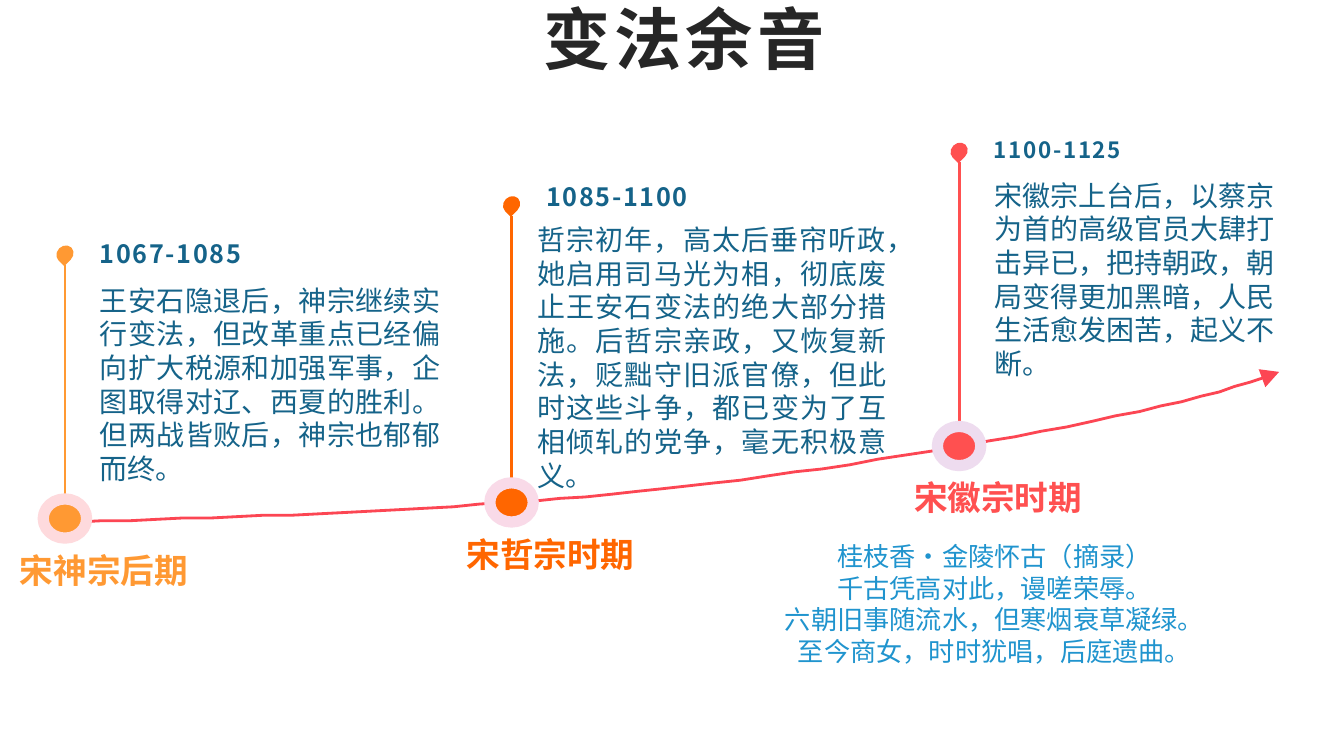
from lxml import etree
from pptx import Presentation
from pptx.dml.color import RGBColor
from pptx.enum.shapes import MSO_CONNECTOR, MSO_SHAPE
from pptx.enum.text import MSO_ANCHOR, MSO_AUTO_SIZE, PP_ALIGN
from pptx.oxml.ns import qn
from pptx.util import Pt

LEFT, MID, JUST = PP_ALIGN.LEFT, PP_ALIGN.CENTER, PP_ALIGN.JUSTIFY
TOP, CENTRE = MSO_ANCHOR.TOP, MSO_ANCHOR.MIDDLE
OVAL, DROP, TIP = MSO_SHAPE.OVAL, MSO_SHAPE.TEAR, MSO_SHAPE.ISOSCELES_TRIANGLE
STRAIGHT, FIXED = MSO_CONNECTOR.STRAIGHT, MSO_AUTO_SIZE.NONE

# Content
TITLE = "变法余音"
POEM = [
    "桂枝香·金陵怀古（摘录）",
    "千古凭高对此，谩嗟荣辱。",
    "六朝旧事随流水，但寒烟衰草凝绿。",
    "至今商女，时时犹唱，后庭遗曲。",
]
# x: stem; pin, dot: centre heights; year: top of date; box: text area
STAGES = [
    dict(name="宋神宗后期", date="1067-1085", size=18, fill="FF9933", ring="FEDADD",
         x=46.4, pin=181.4, dot=370.4, year=166.3, box=(61.9, 197.3, 262, 147),
         text="王安石隐退后，神宗继续实行变法，但改革重点已经偏向扩大税源和加强军事，"
              "企图取得对辽、西夏的胜利。但两战皆败后，神宗也郁郁而终。"),
    dict(name="宋哲宗时期", date="1085-1100", size=18, fill="FF6600", ring="F9DAE8",
         x=365.4, pin=146.2, dot=358.9, year=125.3, box=(374.4, 154.1, 268.6, 190),
         text="哲宗初年，高太后垂帘听政，她启用司马光为相，彻底废止王安石变法的绝大部分措施。"
              "后哲宗亲政，又恢复新法，贬黜守旧派官僚，但此时这些斗争，"
              "都已变为了互相倾轧的党争，毫无积极意义。"),
    dict(name="宋徽宗时期", date="1100-1125", size=16, fill="FF5050", ring="EEDCEF",
         x=685.1, pin=108, dot=318.6, year=92.2, box=(700.6, 122.4, 219.6, 140),
         text="宋徽宗上台后，以蔡京为首的高级官员大肆打击异已，把持朝政，朝局变得更加黑暗，"
              "人民生活愈发困苦，起义不断。"),
]
CURVE = [
    ((33.1, 373.7), (190.1, 368.6), (346.3, 364.3), (491.8, 347)),
    ((491.8, 347), (636.5, 330.5), (833, 295.2), (902.2, 270)),
]
STEPS = 24

THEME = dict(
    head="Noto Sans CJK JP", font="Noto Sans CJK SC",
    ink="262626", body="156389", poem="2094CE", path="FC4653",
    title=48, label=24, text=20, verse=18.7, line=2, ring=8,
)


def rgb(code):
    return RGBColor.from_string(code)


def place(shape, box):
    shape.left, shape.top, shape.width, shape.height = map(Pt, box)


def write(shape, lines, size, color, bold=False, font=THEME["font"], gap=0,
          align=LEFT, space=None, anchor=TOP, inset=(9.4, 5)):
    frame = shape.text_frame
    frame.word_wrap, frame.auto_size = True, FIXED
    frame.vertical_anchor = anchor
    frame.margin_left = frame.margin_right = Pt(inset[0])
    frame.margin_top = frame.margin_bottom = Pt(inset[1])
    for i, line in enumerate(lines):
        para = frame.add_paragraph() if i else frame.paragraphs[0]
        para.alignment = align
        para.space_before = para.space_after = Pt(0)
        if space:
            para.line_spacing = space
        props = para._p.get_or_add_pPr()
        props.set("marL", "0")
        props.set("indent", "0")
        etree.SubElement(props, qn("a:buNone"))
        run = para.add_run()
        run.text = line
        run.font.size, run.font.bold, run.font.name = Pt(size), bold, font
        run.font.color.rgb = rgb(color)
        look = run._r.get_or_add_rPr()
        etree.SubElement(look, qn("a:ea")).set("typeface", font)
        if gap:
            look.set("spc", str(int(gap * 100)))


def label(slide, box, text, size, color, **style):
    write(slide.shapes.add_textbox(*map(Pt, box)), [text], size, color, **style)


def mark(slide, kind, x, y, w, h, fill, ring=None, turn=0):
    """Add a filled shape centred on x, y."""
    shape = slide.shapes.add_shape(kind, Pt(x - w / 2), Pt(y - h / 2), Pt(w), Pt(h))
    shape.shadow.inherit = False
    shape.rotation = turn
    shape.fill.solid()
    shape.fill.fore_color.rgb = rgb(fill)
    if ring:
        shape.line.color.rgb = rgb(ring)
        shape.line.width = Pt(THEME["ring"])
    else:
        shape.line.fill.background()


def bend(a, b, c, d, t):
    """Point on a cubic curve."""
    u = 1 - t
    return tuple(u**3 * p + 3 * u * u * t * q + 3 * u * t * t * r + t**3 * s
                 for p, q, r, s in zip(a, b, c, d))


def draw_path(slide):
    dots = [bend(*part, i / STEPS) for part in CURVE for i in range(STEPS + 1)]
    pen = slide.shapes.build_freeform(*dots[0], scale=Pt(1))
    pen.add_line_segments(dots[1:], close=False)
    path = pen.convert_to_shape()
    path.shadow.inherit = False
    path.fill.background()
    path.line.color.rgb = rgb(THEME["path"])
    path.line.width = Pt(THEME["line"])


def draw_stage(slide, stage):
    x, pin, dot, fill = stage["x"], stage["pin"], stage["dot"], stage["fill"]
    stem = slide.shapes.add_connector(STRAIGHT, Pt(x), Pt(pin + 8), Pt(x), Pt(dot - 16.7))
    stem.line.color.rgb = rgb(fill)
    stem.line.width = Pt(THEME["line"])
    etree.SubElement(stem._element.spPr, qn("a:effectLst"))
    mark(slide, DROP, x, pin, 13, 11.5, fill, turn=135)
    mark(slide, OVAL, x, dot, 31, 28, fill, ring=stage["ring"])
    label(slide, (x - 41.6, dot + 20.6, 160, 42), stage["name"], THEME["label"], fill,
          bold=True, space=0.9)
    label(slide, stage["box"], stage["text"], THEME["text"], THEME["body"],
          align=JUST, space=Pt(24))
    label(slide, (x + 15.5, stage["year"], 152, 29.5), stage["date"], stage["size"],
          THEME["body"], bold=True, gap=1.2, anchor=CENTRE)


def main():
    deck = Presentation()
    deck.slide_width, deck.slide_height = Pt(960), Pt(540)
    slide = deck.slides.add_slide(deck.slide_layouts[1])

    # Title and poem
    title, poem = slide.shapes.title, slide.placeholders[1]
    place(title, (380.9, 0.7, 245.5, 73.4))
    write(title, [TITLE], THEME["title"], THEME["ink"], bold=True, font=THEME["head"],
          gap=3, space=0.9, inset=(7.2, 3.6))
    place(poem, (460.8, 382.3, 499.2, 157.7))
    write(poem, POEM, THEME["verse"], THEME["poem"], align=MID, space=Pt(22.5),
          inset=(7.2, 3.6))

    # Timeline
    draw_path(slide)
    for stage in STAGES:
        draw_stage(slide, stage)
    mark(slide, TIP, 907.6, 267.9, 13.7, 13, THEME["path"], turn=69.7)

    deck.save("out.pptx")


if __name__ == "__main__":
    main()
